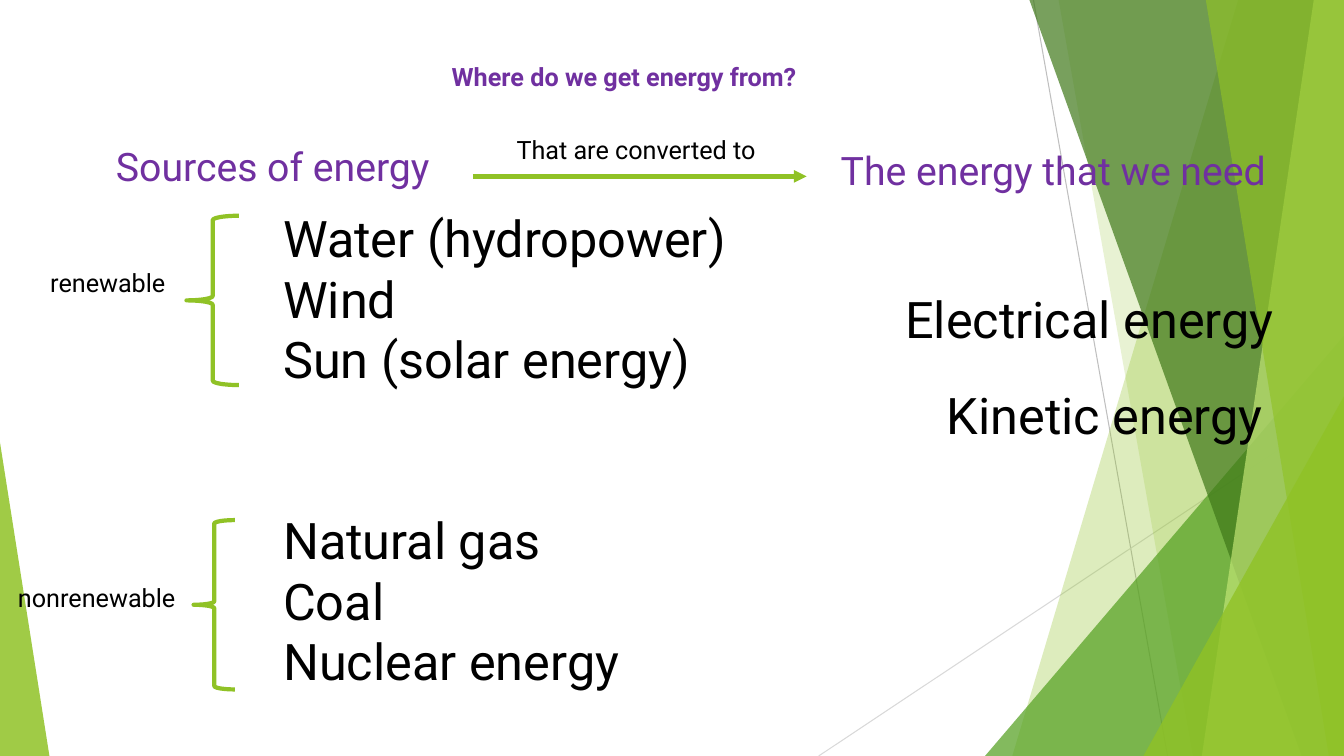
from lxml import etree
from pptx import Presentation
from pptx.dml.color import RGBColor
from pptx.enum.shapes import MSO_CONNECTOR, MSO_SHAPE
from pptx.enum.text import MSO_ANCHOR, MSO_AUTO_SIZE, PP_ALIGN
from pptx.oxml.ns import qn
from pptx.util import Pt

PX = 9144  # EMU in one px, 100 px to the inch
WIDTH, HEIGHT = 1333, 750
FONT = "Roboto"
COLORS = {
    "black": "000000",
    "purple": "7030A0",
    "lime": "90C226",
    "green": "54A021",
    "forest": "3F7819",
    "pale": "C0E474",
    "gray": "BFBFBF",
    "silver": "D9D9D9",
}
STRAIGHT = MSO_CONNECTOR.STRAIGHT
TRIANGLE = MSO_SHAPE.ISOSCELES_TRIANGLE
LEFT_BRACE = MSO_SHAPE.LEFT_BRACE
LEFT, CENTER = PP_ALIGN.LEFT, PP_ALIGN.CENTER
TOP = MSO_ANCHOR.TOP
NO_AUTOFIT = MSO_AUTO_SIZE.NONE


def rgb(color):
    return RGBColor.from_string(COLORS[color])


def emu(*lengths):
    return [length * PX for length in lengths]


def paint(shape, color, opacity):
    """Fill without outline, opacity in percent."""
    shape.shadow.inherit = False
    shape.line.fill.background()
    shape.fill.solid()
    shape.fill.fore_color.rgb = rgb(color)
    fill_color = shape.fill._xPr.find(f".//{qn('a:srgbClr')}")
    etree.SubElement(fill_color, qn("a:alpha"), val=str(opacity * 1000))


def add_band(slide, top_left, bottom_left, color, opacity):
    """Full-height band that reaches the right edge of the slide."""
    builder = slide.shapes.build_freeform(top_left, 0, scale=PX)
    builder.add_line_segments(
        [(WIDTH, 0), (WIDTH, HEIGHT), (bottom_left, HEIGHT)], close=True)
    paint(builder.convert_to_shape(), color, opacity)


def add_corner(slide, left, top, width, apex, color, opacity):
    """Right triangle standing on the bottom edge of the slide."""
    corner = slide.shapes.add_shape(
        TRIANGLE, *emu(left, top, width, HEIGHT - top))
    corner.adjustments[0] = apex
    paint(corner, color, opacity)


def add_line(slide, start, end, color, weight, arrow=False):
    line = slide.shapes.add_connector(STRAIGHT, *emu(*start, *end))
    line.line.color.rgb = rgb(color)
    line.line.width = Pt(weight)
    if arrow:
        etree.SubElement(line.line._get_or_add_ln(), qn("a:tailEnd"), type="triangle")
    etree.SubElement(line._element.spPr, qn("a:effectLst"))


def add_brace(slide, left, top, width, height):
    brace = slide.shapes.add_shape(LEFT_BRACE, *emu(left, top, width, height))
    brace.shadow.inherit = False
    brace.fill.background()
    brace.line.color.rgb = rgb("lime")
    brace.line.width = Pt(3)


def write(frame, lines, size, color="black", align=LEFT, bold=False):
    frame.word_wrap = True
    frame.auto_size = NO_AUTOFIT
    frame.vertical_anchor = TOP
    frame.text = "\n".join(lines)
    for paragraph in frame.paragraphs:
        paragraph.alignment = align
        font = paragraph.font
        font.name, font.size, font.bold = FONT, Pt(size), bold
        font.color.rgb = rgb(color)


def add_text(slide, box, lines, size, color="black", align=LEFT):
    frame = slide.shapes.add_textbox(*emu(*box)).text_frame
    write(frame, lines, size, color, align)
    return frame


def add_title(slide, box, text):
    title = slide.shapes.title
    title.left, title.top, title.width, title.height = emu(*box)
    write(title.text_frame, [text], 18, "purple", bold=True)


def add_backdrop(slide):
    add_line(slide, (1025, 0), (1158, HEIGHT), "gray", 0.75)
    add_line(slide, (WIDTH, 403), (812, HEIGHT), "silver", 0.75)
    add_band(slide, 1228, 1004, "lime", 30)
    add_band(slide, 1050, 1183, "lime", 20)
    add_corner(slide, 977, 333, 356, 1, "green", 72)
    add_band(slide, 1021, 1291, "forest", 70)
    add_band(slide, 1303, 1192, "pale", 70)
    add_band(slide, 1196, 1318, "lime", 65)
    add_corner(slide, 1134, 393, 199, 1, "lime", 80)
    add_corner(slide, 0, 439, 49, 0, "lime", 85)


def add_sources(slide):
    renewable = ["Water (hydropower)", "Wind", "Sun (solar energy)"]
    nonrenewable = ["Natural gas", "Coal", "Nuclear energy"]
    add_text(slide, (96, 136, 349, 57), ["Sources of energy"], 28, "purple", CENTER)
    sources = add_text(slide, (271, 201, 512, 495), renewable + nonrenewable, 36)
    sources.paragraphs[len(renewable)].space_before = Pt(86)
    add_brace(slide, 185, 214, 52, 168)
    add_brace(slide, 192, 516, 41, 168)
    add_text(slide, (40, 260, 156, 40), ["renewable"], 18)
    add_text(slide, (8, 573, 199, 40), ["nonrenewable"], 18)


def add_conversion(slide):
    add_line(slide, (469, 175), (800, 175), "lime", 3, arrow=True)
    add_text(slide, (491, 128, 280, 40), ["That are converted to"], 18, align=CENTER)


def add_needs(slide):
    add_text(slide, (824, 140, 461, 57), ["The energy that we need"], 28, "purple")
    add_text(slide, (888, 281, 422, 71), ["Electrical energy"], 36)
    add_text(slide, (929, 376, 381, 71), ["Kinetic energy"], 36)


def main():
    deck = Presentation()
    deck.slide_width, deck.slide_height = emu(WIDTH, HEIGHT)
    slide = deck.slides.add_slide(deck.slide_layouts[5])
    add_backdrop(slide)
    add_title(slide, (438, 56, 386, 40), "Where do we get energy from?")
    add_sources(slide)
    add_conversion(slide)
    add_needs(slide)
    deck.save("out.pptx")


if __name__ == "__main__":
    main()
